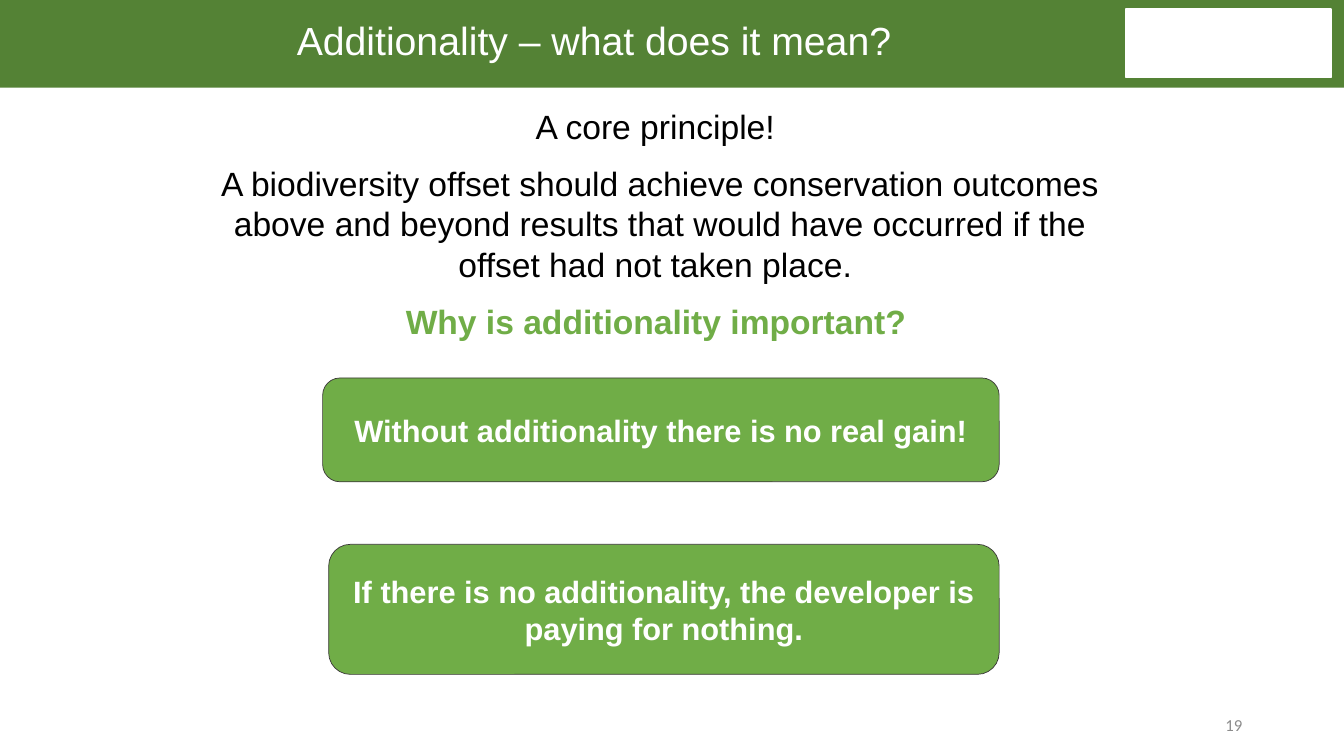
from dataclasses import dataclass

from pptx import Presentation
from pptx.dml.color import RGBColor
from pptx.enum.shapes import MSO_SHAPE
from pptx.enum.text import MSO_ANCHOR, PP_ALIGN
from pptx.util import Inches, Pt

RECT, ROUND = MSO_SHAPE.RECTANGLE, MSO_SHAPE.ROUNDED_RECTANGLE
CENTER, RIGHT = PP_ALIGN.CENTER, PP_ALIGN.RIGHT
TOP, MIDDLE = MSO_ANCHOR.TOP, MSO_ANCHOR.MIDDLE


@dataclass(frozen=True)
class Theme:
    font: str = "Arial"
    num_font: str = "Calibri"
    white: str = "FFFFFF"
    black: str = "000000"
    dark: str = "548235"
    green: str = "70AD47"
    edge: str = "3B3838"
    gray: str = "8C8C8C"
    title: int = 28
    body: int = 24
    card: int = 22
    small: int = 20
    num: int = 12
    gap: int = 12


THEME = Theme()


def add_run(para, text, size, color, bold=False, font=THEME.font):
    run = para.add_run()
    run.text = text
    run.font.name = font
    run.font.size = Pt(size)
    run.font.bold = bold
    run.font.color.rgb = RGBColor.from_string(color)


def add_box(slide, box, align=CENTER, anchor=TOP):
    """Add a wrapping text box and return its frame."""
    frame = slide.shapes.add_textbox(*map(Inches, box)).text_frame
    frame.word_wrap = True
    frame.vertical_anchor = anchor
    frame.paragraphs[0].alignment = align
    return frame


def add_panel(slide, kind, box, fill, line=None, width=1):
    shape = slide.shapes.add_shape(kind, *map(Inches, box))
    shape.shadow.inherit = False
    shape.fill.solid()
    shape.fill.fore_color.rgb = RGBColor.from_string(fill)
    if line:
        shape.line.color.rgb = RGBColor.from_string(line)
        shape.line.width = Pt(width)
    else:
        shape.line.fill.background()
    return shape


def add_card(slide, box, text):
    card = add_panel(slide, ROUND, box, THEME.green, THEME.edge, 0.5)
    frame = card.text_frame
    frame.word_wrap = True
    frame.vertical_anchor = MIDDLE
    para = frame.paragraphs[0]
    para.alignment = CENTER
    add_run(para, text, THEME.card, THEME.white, bold=True)


def add_header(slide, text):
    add_panel(slide, RECT, (0, -0.03, 13.33, 0.9), THEME.dark)
    add_panel(slide, RECT, (11.17, 0.09, 2.03, 0.68), THEME.white, THEME.white)
    para = add_box(slide, (2.57, 0.17, 6.64, 0.53)).paragraphs[0]
    para.line_spacing = 0.9
    add_run(para, text, THEME.title, THEME.white)


def add_body(slide, lines, question):
    frame = add_box(slide, (2.08, 1, 8.93, 2.46))
    for i, text in enumerate([*lines, question]):
        para = frame.add_paragraph() if i else frame.paragraphs[0]
        para.alignment = CENTER
        if i:
            para.space_before = Pt(THEME.gap)
        if text == question:
            add_run(para, text, THEME.body, THEME.green, bold=True)
            add_run(para, " ", THEME.small, THEME.green)
        else:
            add_run(para, text, THEME.body, THEME.black)


def add_number(slide, text):
    frame = add_box(slide, (11.54, 7.04, 0.88, 0.31), RIGHT, MIDDLE)
    add_run(frame.paragraphs[0], text, THEME.num, THEME.gray, font=THEME.num_font)


def main():
    deck = Presentation()
    deck.slide_width, deck.slide_height = Inches(13.33), Inches(7.5)
    slide = deck.slides.add_slide(deck.slide_layouts[6])
    add_number(slide, "19")
    add_header(slide, "Additionality – what does it mean?")
    add_body(
        slide,
        [
            "A core principle! ",
            "A biodiversity offset should achieve conservation outcomes above "
            "and beyond results that would have occurred if the offset had not "
            "taken place. ",
        ],
        "Why is additionality important?",
    )
    add_card(slide, (3.2, 3.75, 6.71, 1.03),
             "Without additionality there is no real gain!")
    add_card(slide, (3.26, 5.4, 6.65, 1.29),
             "If there is no additionality, the developer is paying for nothing.")
    deck.save("out.pptx")


if __name__ == "__main__":
    main()
